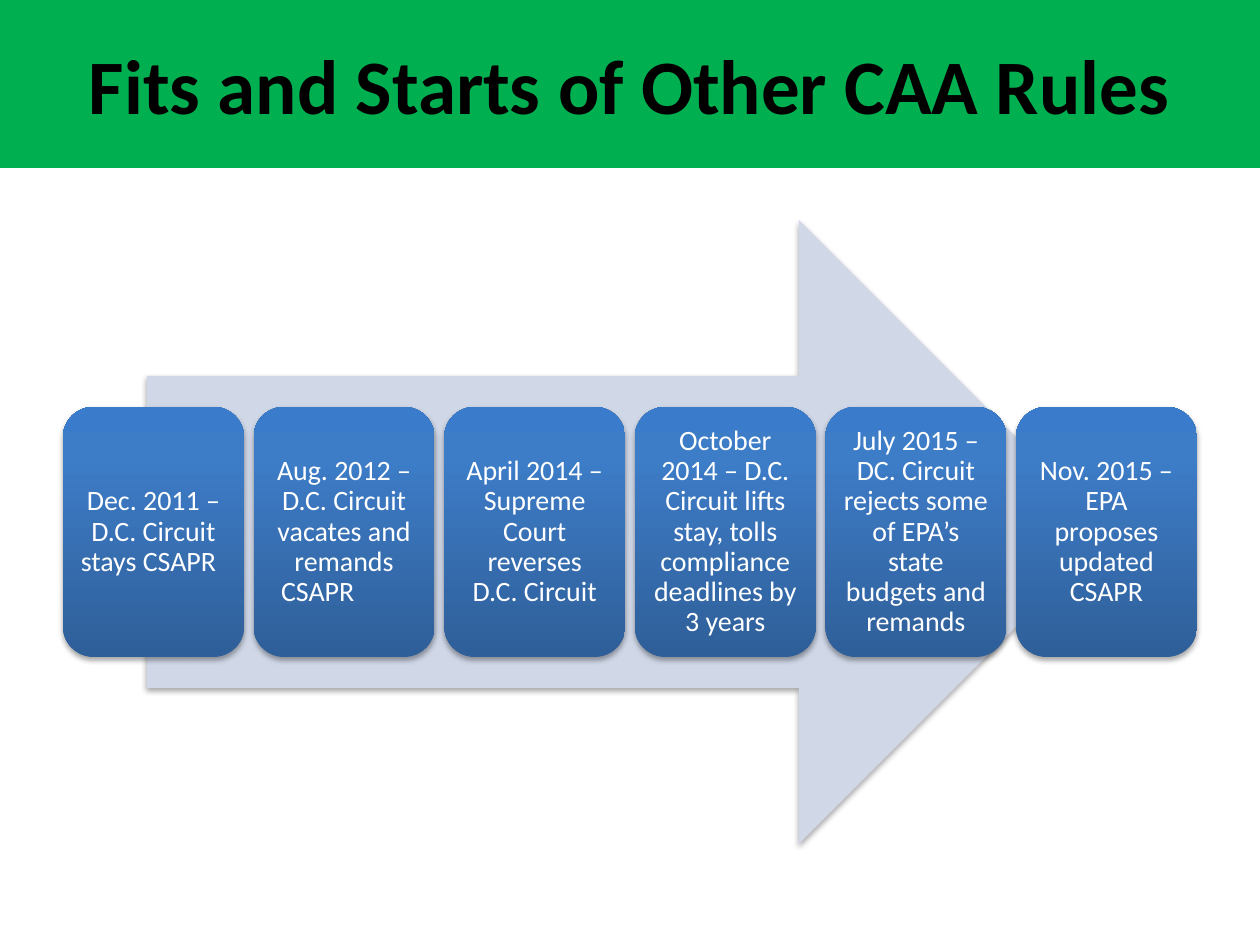
from copy import deepcopy

from lxml import etree
from pptx import Presentation
from pptx.dml.color import RGBColor
from pptx.enum.shapes import MSO_SHAPE
from pptx.enum.text import MSO_ANCHOR, PP_ALIGN
from pptx.oxml.ns import qn
from pptx.util import Emu, Pt

RIGHT_ARROW = MSO_SHAPE.RIGHT_ARROW
ROUNDED_RECTANGLE = MSO_SHAPE.ROUNDED_RECTANGLE
MIDDLE = MSO_ANCHOR.MIDDLE
CENTER = PP_ALIGN.CENTER

PX_PER_INCH = 126
SLIDE_WIDTH, SLIDE_HEIGHT = 1260, 945
MARGIN = 63
CARD_TOP, CARD_WIDTH, CARD_HEIGHT = 407, 181, 250
CARD_INSET = 9
FONT = "Calibri"
CARD_GRADIENT = [(0, "2F5F99"), (0.8, "3D7CC7"), (1, "3A7CCB")]

MILESTONES = [
    "Dec. 2011 – D.C. Circuit stays CSAPR\t",
    "Aug. 2012 – D.C. Circuit vacates and remands CSAPR\t",
    "April 2014 – Supreme Court reverses D.C. Circuit",
    "October 2014 – D.C. Circuit lifts stay, tolls compliance deadlines by 3 years",
    "July 2015 – DC. Circuit rejects some of EPA’s state budgets and remands",
    "Nov. 2015 – EPA proposes updated CSAPR",
]


def px(length):
    return Emu(round(length * 914400 / PX_PER_INCH))


def color(hex_string):
    return RGBColor.from_string(hex_string)


def set_text(shape, text, size, text_color, bold=False):
    frame = shape.text_frame
    frame.text = text
    frame.word_wrap = True
    frame.vertical_anchor = MIDDLE
    paragraph = frame.paragraphs[0]
    paragraph.alignment = CENTER
    paragraph.font.name = FONT
    paragraph.font.size = Pt(size)
    paragraph.font.bold = bold
    paragraph.font.color.rgb = color(text_color)


def add_soft_shadow(shape):
    shape.shadow.inherit = False
    effects = shape._element.spPr.find(qn("a:effectLst"))
    shadow = etree.SubElement(
        effects, qn("a:outerShdw"), blurRad=str(Pt(3.1)), dist=str(Pt(1.8)),
        dir="5400000", rotWithShape="0",
    )
    black = etree.SubElement(shadow, qn("a:srgbClr"), val="000000")
    etree.SubElement(black, qn("a:alpha"), val="35000")


def fill_gradient(shape, stops):
    shape.fill.gradient()
    shape.fill.gradient_angle = 90
    stop_list = shape._element.spPr.find(".//" + qn("a:gsLst"))
    while len(stop_list) < len(stops):
        stop_list.append(deepcopy(stop_list[0]))
    for stop, (position, stop_color) in zip(shape.fill.gradient_stops, stops):
        stop.position = position
        stop.color.rgb = color(stop_color)


def add_block(slide, preset, left, top, width, height):
    block = slide.shapes.add_shape(preset, px(left), px(top), px(width), px(height))
    block.line.fill.background()
    add_soft_shadow(block)
    return block


def add_title(slide, text):
    title = slide.shapes.title
    title.left, title.top = px(0), px(0)
    title.width, title.height = px(SLIDE_WIDTH), px(168)
    title.fill.solid()
    title.fill.fore_color.rgb = color("00B050")
    set_text(title, text, 44, "000000", bold=True)


def add_arrow(slide):
    arrow = add_block(slide, RIGHT_ARROW, 147, 220, 964, 624)
    arrow.fill.solid()
    arrow.fill.fore_color.rgb = color("D0D8E8")


def add_milestone(slide, left, text):
    card = add_block(slide, ROUNDED_RECTANGLE, left, CARD_TOP, CARD_WIDTH, CARD_HEIGHT)
    fill_gradient(card, CARD_GRADIENT)
    set_text(card, text, 16, "FFFFFF")
    frame = card.text_frame
    frame.margin_left = frame.margin_right = px(CARD_INSET)
    frame.margin_top = frame.margin_bottom = px(CARD_INSET)
    frame.paragraphs[0].line_spacing = 0.9


def main():
    presentation = Presentation()
    presentation.slide_width = px(SLIDE_WIDTH)
    presentation.slide_height = px(SLIDE_HEIGHT)
    slide = presentation.slides.add_slide(presentation.slide_layouts[5])

    add_title(slide, "Fits and Starts of Other CAA Rules")
    add_arrow(slide)
    card_step = (SLIDE_WIDTH - 2 * MARGIN - CARD_WIDTH) / (len(MILESTONES) - 1)
    for index, milestone in enumerate(MILESTONES):
        add_milestone(slide, MARGIN + index * card_step, milestone)

    presentation.save("out.pptx")


if __name__ == "__main__":
    main()
